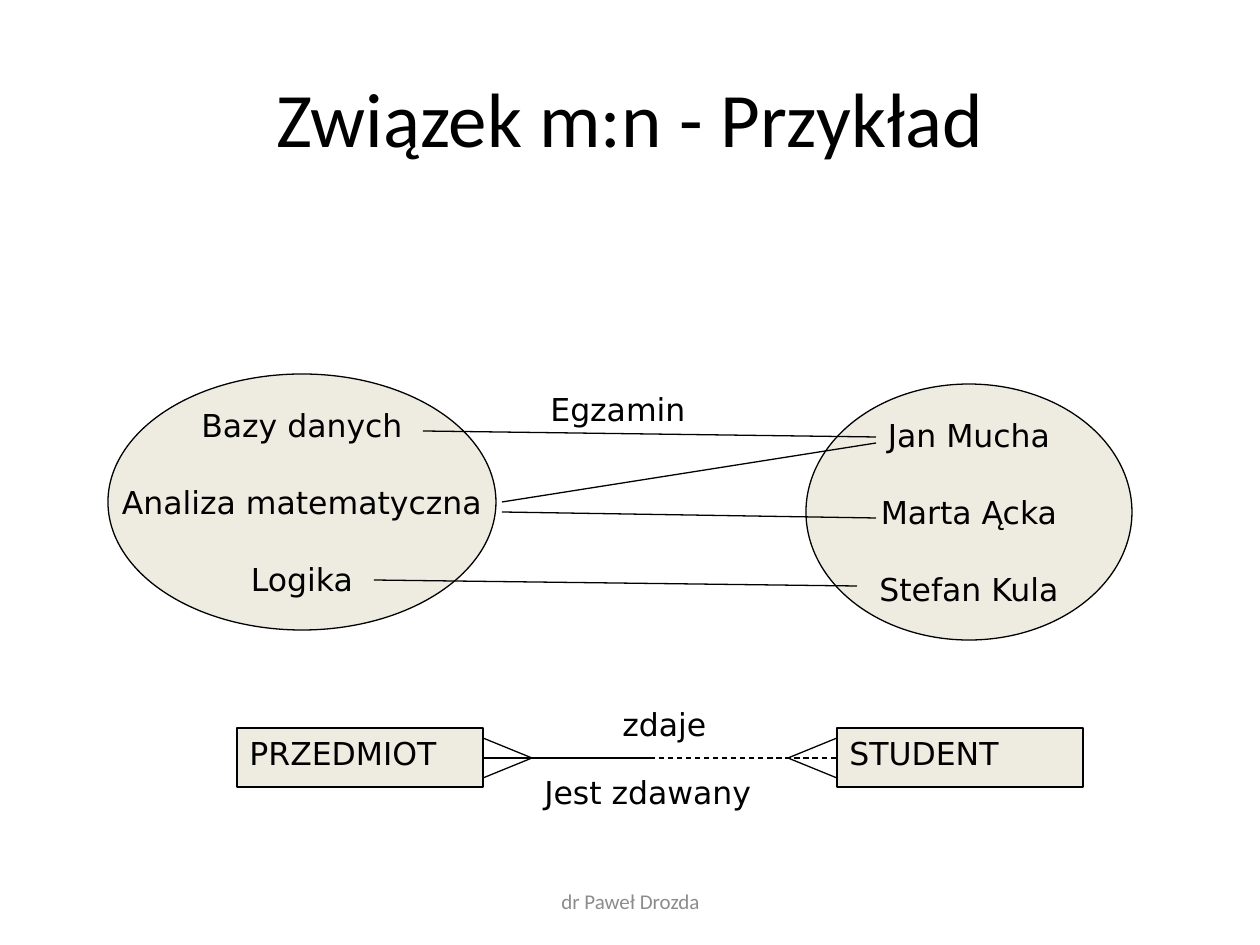
from dataclasses import dataclass

from pptx import Presentation
from pptx.dml.color import RGBColor
from pptx.enum.dml import MSO_LINE
from pptx.enum.shapes import MSO_CONNECTOR, MSO_SHAPE
from pptx.enum.text import MSO_ANCHOR, MSO_AUTO_SIZE, PP_ALIGN
from pptx.oxml.ns import qn
from pptx.util import Inches, Pt

OVAL, RECT = MSO_SHAPE.OVAL, MSO_SHAPE.RECTANGLE
LINE, DASH = MSO_CONNECTOR.STRAIGHT, MSO_LINE.DASH
LEFT, CENTER = PP_ALIGN.LEFT, PP_ALIGN.CENTER
TOP, MIDDLE = MSO_ANCHOR.TOP, MSO_ANCHOR.MIDDLE
GROW = MSO_AUTO_SIZE.SHAPE_TO_FIT_TEXT
SCALE = Inches(1) / 126


@dataclass(frozen=True)
class Theme:
    """Colours, fonts and sizes of the slide."""
    ink: str = "000000"
    gray: str = "8C8C8C"
    sand: str = "EEECE1"
    head: str = "Calibri"
    body: str = "DejaVu Sans"
    title: int = 44
    text: int = 18
    foot: int = 12
    rule: float = 0.75
    gap: float = 22.4


def emu(*px):
    """Turn pixel lengths into EMU."""
    return [round(n * SCALE) for n in px]


def write(frame, text, *, size, font, color, align=LEFT, anchor=TOP, wrap=True, gap=0):
    """Fill a text frame, one paragraph a line."""
    frame.word_wrap = wrap
    frame.vertical_anchor = anchor
    for i, part in enumerate(text.split("\n")):
        para = frame.add_paragraph() if i else frame.paragraphs[0]
        para.alignment = align
        para.space_before = Pt(gap if i else 0)
        run = para.add_run()
        run.text = part
        run.font.size = Pt(size)
        run.font.name = font
        run.font.color.rgb = RGBColor.from_string(color)


class Board:
    """Draws styled elements on the current slide."""

    def __init__(self, slide, theme):
        """Keep the slide and its style."""
        self.slide, self.theme = slide, theme
        self.plain = dict(size=theme.text, font=theme.body, color=theme.ink)

    def pen(self, line):
        """Style an outline or a line."""
        line.color.rgb = RGBColor.from_string(self.theme.ink)
        line.width = Pt(self.theme.rule)

    def label(self, box, text, grow=False, **form):
        """Add a text box."""
        frame = self.slide.shapes.add_textbox(*emu(*box)).text_frame
        write(frame, text, **{**self.plain, **form})
        if grow:
            frame.auto_size = GROW

    def shape(self, kind, box, text, **form):
        """Add a filled shape with text."""
        item = self.slide.shapes.add_shape(kind, *emu(*box))
        item.shadow.inherit = False
        item.fill.solid()
        item.fill.fore_color.rgb = RGBColor.from_string(self.theme.sand)
        self.pen(item.line)
        write(item.text_frame, text, **{**self.plain, **form})

    def link(self, start, end, dash=None):
        """Add a straight line between two points."""
        item = self.slide.shapes.add_connector(LINE, *emu(*start, *end))
        self.pen(item.line)
        if dash:
            item.line.dash_style = dash
        props = item._element.spPr
        props.append(props.makeelement(qn("a:effectLst"), {}))


def main():
    """Build the slide and save it."""
    deck = Presentation()
    deck.slide_width, deck.slide_height = emu(1260, 945)
    theme = Theme()
    board = Board(deck.slides.add_slide(deck.slide_layouts[6]), theme)
    mid = dict(align=CENTER, anchor=MIDDLE)

    board.label((63, 38, 1134, 158), "Związek m:n - Przykład",
                size=theme.title, font=theme.head, **mid)
    board.label((431, 876, 399, 50), "dr Paweł Drozda",
                size=theme.foot, font=theme.head, color=theme.gray, **mid)

    sets = (((108, 374, 388, 256), "Bazy danych\nAnaliza matematyczna\nLogika"),
            ((806, 384, 326, 256), "Jan Mucha\nMarta Ącka\nStefan Kula"))
    for box, names in sets:
        board.shape(OVAL, box, names, wrap=False, gap=theme.gap, **mid)
    pairs = (((876, 437), (423, 431)), ((876, 443), (502, 502)),
             ((876, 518), (502, 512)), ((857, 586), (374, 580)))
    for start, end in pairs:
        board.link(start, end)
    board.label((538, 384, 256, 50), "Egzamin", grow=True)

    axis, half, near, far = 758, 650, 483, 837
    for left, name in ((237, "PRZEDMIOT"), (far, "STUDENT")):
        board.shape(RECT, (left, 728, 246, 59), name)
    board.link((half, axis), (far, axis), DASH)
    board.link((half, axis), (near, axis))
    for tip, edge in ((near + 49, near), (far - 49, far)):
        for rise in (-20, 20):
            board.link((tip, axis), (edge, axis + rise))
    board.label((610, 699, 111, 50), "zdaje", grow=True, wrap=False)
    board.label((532, 767, 238, 50), "Jest zdawany", grow=True, wrap=False)

    deck.save("out.pptx")


if __name__ == "__main__":
    main()
